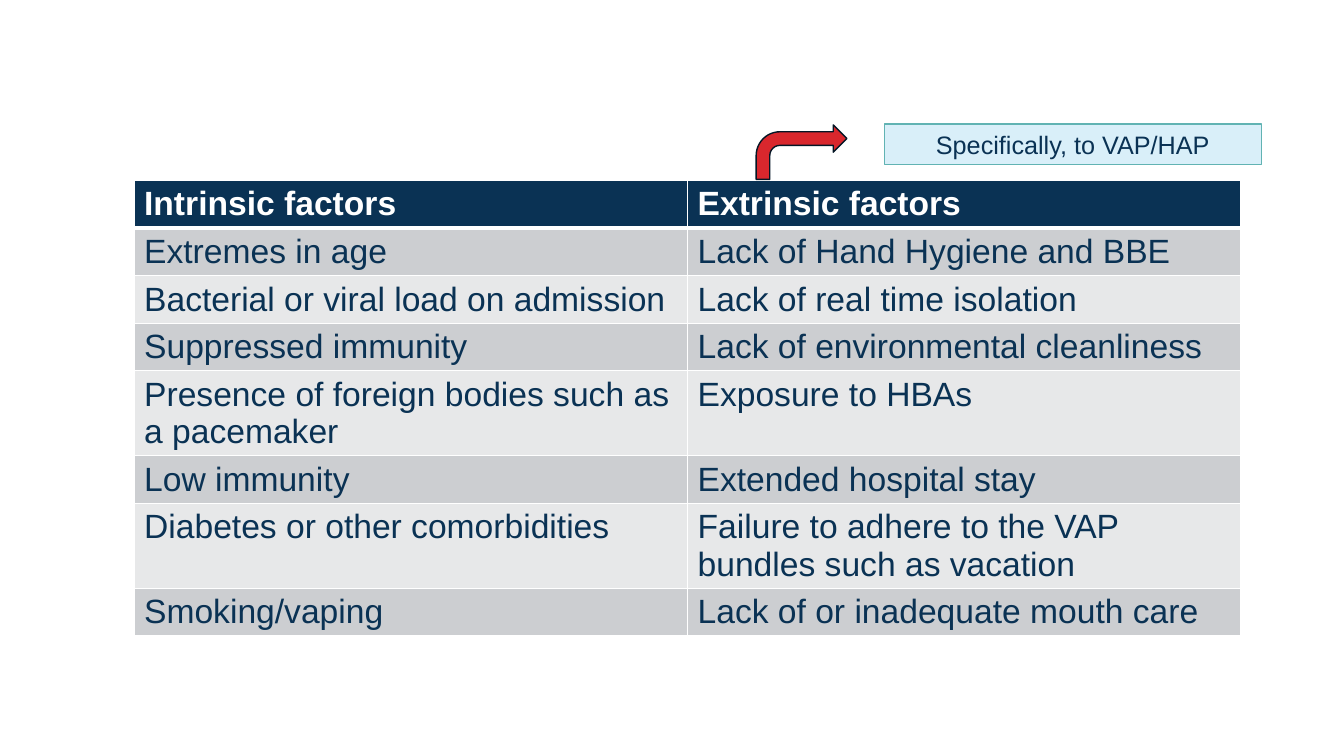
from pptx import Presentation
from pptx.dml.color import RGBColor
from pptx.enum.shapes import MSO_SHAPE as Shape
from pptx.enum.text import MSO_ANCHOR as Anchor, PP_ALIGN as Align
from pptx.oxml import parse_xml
from pptx.oxml.ns import nsdecls
from pptx.util import Inches, Pt

THEME = {
    "font": "Arial",
    "navy": "0A3254",
    "white": "FFFFFF",
    "bands": ("CCCED1", "E7E8E9"),
    "note_fill": "D9EFF9",
    "note_line": "61B3B3",
    "arrow_fill": "D9272D",
    "arrow_line": "041625",
    "table_size": 24,
    "note_size": 18,
}

FACTORS = [
    ("Intrinsic factors", "Extrinsic factors"),
    ("Extremes in age", "Lack of Hand Hygiene and BBE"),
    ("Bacterial or viral load on admission", "Lack of real time isolation"),
    ("Suppressed immunity", "Lack of environmental cleanliness"),
    ("Presence of foreign bodies such as a pacemaker", "Exposure to HBAs"),
    ("Low immunity", "Extended hospital stay"),
    ("Diabetes or other comorbidities", "Failure to adhere to the VAP bundles such as vacation"),
    ("Smoking/vaping", "Lack of or inadequate mouth care"),
]


def add_text(p, text, size, color, bold=False):
    r = p.add_run()
    r.text = text
    r.font.name = THEME["font"]
    r.font.size = Pt(size)
    r.font.bold = bold
    r.font.color.rgb = RGBColor.from_string(color)


def add_box(s, kind, left, top, width, height, fill, line):
    sp = s.shapes.add_shape(kind, Inches(left), Inches(top), Inches(width), Inches(height))
    sp.shadow.inherit = False
    sp.fill.solid()
    sp.fill.fore_color.rgb = RGBColor.from_string(fill)
    sp.line.color.rgb = RGBColor.from_string(line)
    sp.line.width = Pt(1)
    return sp


prs = Presentation()
prs.slide_width = Inches(13.33)
prs.slide_height = Inches(7.5)
s = prs.slides.add_slide(prs.slide_layouts[6])

table = s.shapes.add_table(
    len(FACTORS), 2, Inches(1.33), Inches(1.79), Inches(10.97), Inches(0.41 * len(FACTORS))
).table
table.columns[0].width = Inches(5.49)
table.columns[1].width = Inches(5.48)

for row, factors in enumerate(FACTORS):
    header = row == 0
    fill = THEME["navy"] if header else THEME["bands"][(row - 1) % 2]
    color = THEME["white"] if header else THEME["navy"]
    borders = {"L": 1, "R": 1, "T": 3 if row == 1 else 1, "B": 3 if header else 1}
    for col, text in enumerate(factors):
        cell = table.cell(row, col)
        tc_pr = cell._tc.get_or_add_tcPr()
        for side, width in borders.items():
            tc_pr.append(parse_xml(
                f'<a:ln{side} {nsdecls("a")} w="{Pt(width)}"><a:solidFill>'
                f'<a:srgbClr val="{THEME["white"]}"/></a:solidFill></a:ln{side}>'
            ))
        cell.fill.solid()
        cell.fill.fore_color.rgb = RGBColor.from_string(fill)
        add_text(cell.text_frame.paragraphs[0], text, THEME["table_size"], color, header)

note = add_box(s, Shape.RECTANGLE, 8.77, 1.23, 3.74, 0.4, THEME["note_fill"], THEME["note_line"])
tf = note.text_frame
tf.word_wrap = True
tf.vertical_anchor = Anchor.MIDDLE
p = tf.paragraphs[0]
p.alignment = Align.CENTER
add_text(p, "Specifically, to VAP/HAP", THEME["note_size"], THEME["navy"])

add_box(s, Shape.BENT_ARROW, 7.5, 1.24, 0.9, 0.54, THEME["arrow_fill"], THEME["arrow_line"])

prs.save("out.pptx")
